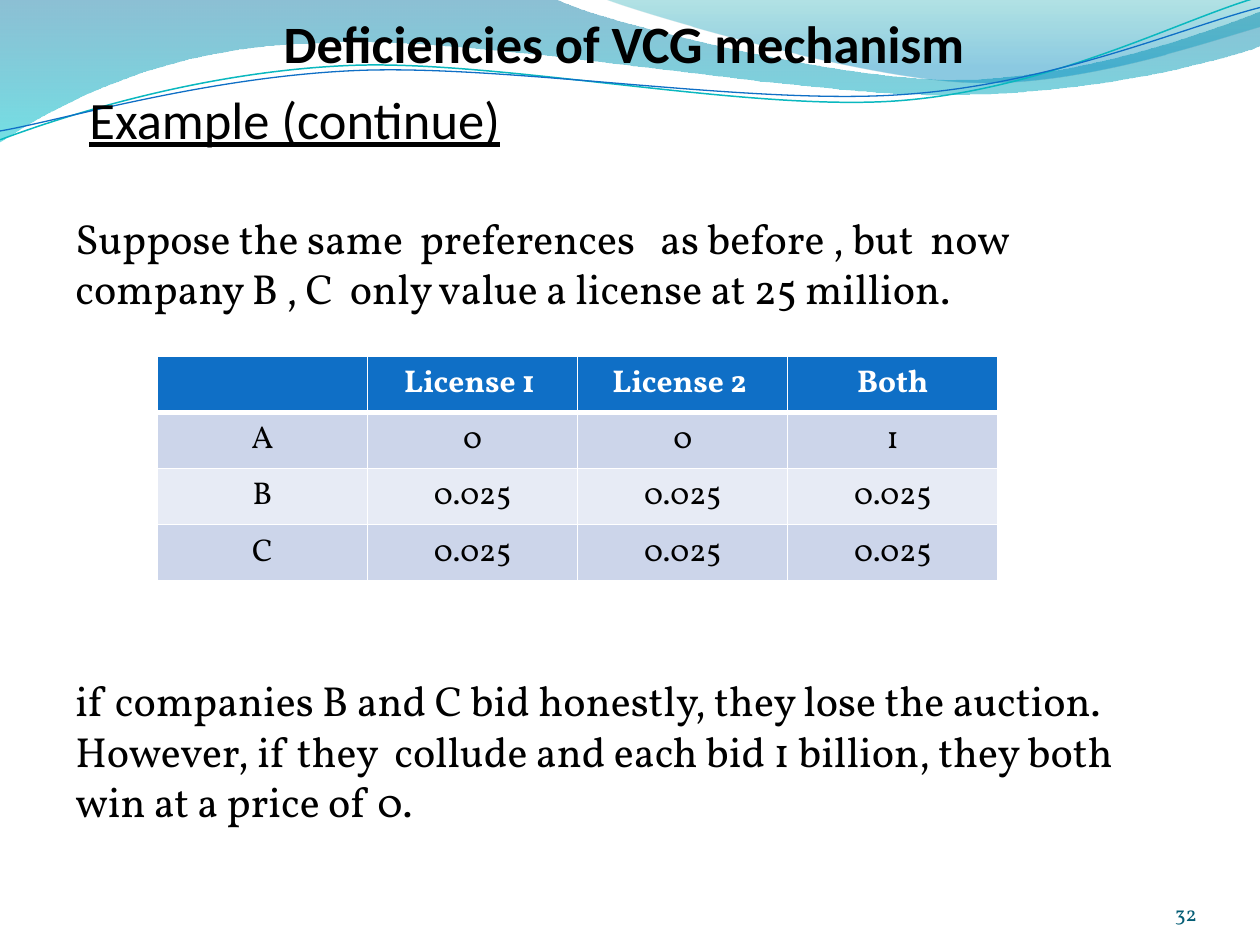
import math
import pptx
import pptx.util
import pptx.dml.color
import pptx.enum.text
import pptx.oxml
import pptx.oxml.ns
from pptx.util import Inches, Pt

RGBColor = pptx.dml.color.RGBColor
Align = pptx.enum.text.PP_ALIGN
Anchor = pptx.enum.text.MSO_ANCHOR

BLACK = RGBColor(0x00, 0x00, 0x00)
WHITE = RGBColor(0xFF, 0xFF, 0xFF)
BLUE = RGBColor(0x0F, 0x6F, 0xC6)
TURQUOISE = RGBColor(0x0A, 0xB8, 0xBF)
NUMBER_TEAL = RGBColor(0x04, 0x5D, 0x75)
BAND_DARK = RGBColor(0xCC, 0xD5, 0xEA)
BAND_LIGHT = RGBColor(0xE7, 0xEB, 0xF5)
WAVE_BLUE = RGBColor(0x00, 0x74, 0xA1)
WAVE_CYAN = RGBColor(0x00, 0xC6, 0xCF)
CREST_TEAL = RGBColor(0x00, 0xA1, 0xA9)
CREST_BLUE = RGBColor(0x00, 0x8B, 0xBF)

LINE_TILT = 2.7

LARGE_WAVE = [
    (0, 0), (4.4, -0.01),
    (4.76, 0.17, 6.64, 0.63, 7.58, 0.63), (8.53, 0.63, 9.58, 0.26, 10, 0.09),
    (10.01, 0.36),
    (9.83, 0.44, 8.7, 0.76, 7.46, 0.75), (6.22, 0.75, 3.82, 0.28, 2.57, 0.34),
    (1.29, 0.36, 0.46, 0.83, -0.01, 1.13),
]
CREST = [
    (4.79, -0.01),
    (5.09, 0.11, 6.82, 0.62, 7.69, 0.65), (8.56, 0.69, 9.61, 0.32, 10, 0.21),
    (10, 0),
]
TURQUOISE_LINE = [
    (0, 1.11),
    (0.48, 0.93, 1.58, 0.57, 2.77, 0.52), (3.95, 0.47, 5.93, 0.89, 7.13, 0.8),
    (8.33, 0.71, 9.38, 0.15, 9.98, -0.02),
]
BLUE_LINE = [
    (0, 1.04),
    (0.47, 0.96, 1.64, 0.61, 2.83, 0.56), (4.03, 0.51, 5.97, 0.84, 7.17, 0.75),
    (8.36, 0.67, 9.41, 0.21, 10, 0.06),
]
VALUES = [
    ["", "License 1 ", "License 2 ", "Both"],
    ["A", "0", "0", "1"],
    ["B", "0.025", "0.025", "0.025"],
    ["C", "0.025", "0.025", "0.025"],
]
BODY = [
    "Suppose the same  preferences   as before , but  now company B , C  only value a license at 25 million.",
    "if companies B and C bid honestly, they lose the auction. However, if they  collude and each bid 1 billion, they both win at a price of 0.",
]


def points_of(segment):
    return list(zip(segment[::2], segment[1::2]))


def level_segments(segments, center):
    angle = math.radians(LINE_TILT)
    cosine, sine = math.cos(angle), math.sin(angle)
    leveled = []
    for segment in segments:
        coordinates = []
        for x, y in points_of(segment):
            across, down = x - center[0], y - center[1]
            coordinates.append(center[0] + across * cosine - down * sine)
            coordinates.append(center[1] + across * sine + down * cosine)
        leveled.append(tuple(coordinates))
    return leveled


def add_outline(slide, segments, close):
    anchors = [
        tuple(Inches(value) for value in segment[-2:]) for segment in segments
    ]
    builder = slide.shapes.build_freeform(*anchors[0])
    builder.add_line_segments(anchors[1:], close=close)
    shape = builder.convert_to_shape()
    shape.shadow.inherit = False
    lines = list(shape.element.spPr.iter(pptx.oxml.ns.qn("a:lnTo")))
    for line, segment in zip(lines, segments[1:]):
        if len(segment) == 6:
            points = "".join(
                f'<a:pt x="{Inches(x) - shape.left}" y="{Inches(y) - shape.top}"/>'
                for x, y in points_of(segment)
            )
            curve = pptx.oxml.parse_xml(
                f'<a:cubicBezTo {pptx.oxml.ns.nsdecls("a")}>{points}</a:cubicBezTo>'
            )
            line.getparent().replace(line, curve)
    return shape


def add_wave(slide, segments, stops):
    shape = add_outline(slide, segments, True)
    shape.line.fill.background()
    shape.fill.gradient()
    shape.fill.gradient_angle = 270
    for stop, (position, color, opacity) in zip(shape.fill.gradient_stops, stops):
        stop.position = position
        stop.color.rgb = color
    colors = shape.element.spPr.iter(pptx.oxml.ns.qn("a:srgbClr"))
    for color_element, (position, color, opacity) in zip(colors, stops):
        alpha = pptx.oxml.parse_xml(
            f'<a:alpha {pptx.oxml.ns.nsdecls("a")} val="{opacity * 1000}"/>'
        )
        color_element.append(alpha)


def add_wave_line(slide, segments, center, color, width):
    shape = add_outline(slide, level_segments(segments, center), False)
    shape.rotation = -LINE_TILT
    shape.fill.background()
    shape.line.color.rgb = color
    shape.line.width = Pt(width)


def format_paragraph(paragraph, font, size, color, align=Align.LEFT, bold=False, underline=False):
    paragraph.alignment = align
    for run in paragraph.runs:
        run.font.name = font
        run.font.size = Pt(size)
        run.font.color.rgb = color
        run.font.bold = bold
        run.font.underline = underline


def place_label(shape, text, box, **style):
    shape.left, shape.top, shape.width, shape.height = (Inches(value) for value in box)
    frame = shape.text_frame
    frame.text = text
    frame.word_wrap = True
    frame.auto_size = pptx.enum.text.MSO_AUTO_SIZE.NONE
    frame.vertical_anchor = Anchor.BOTTOM
    frame.margin_left = frame.margin_right = frame.margin_bottom = 0
    format_paragraph(frame.paragraphs[0], **style)


def add_body(slide):
    frame = slide.shapes.add_textbox(Inches(0.5), Inches(1.17), Inches(9), Inches(5.33)).text_frame
    frame.word_wrap = True
    frame.margin_top = Inches(0.52)
    frame.text = "\n".join(BODY)
    for paragraph in frame.paragraphs:
        format_paragraph(paragraph, "Vollkorn", 24, BLACK)
        paragraph.line_spacing = Pt(28.6)
    frame.paragraphs[1].space_before = Pt(207)


def add_borders(cell, bottom_width):
    properties = cell._tc.get_or_add_tcPr()
    widths = {"lnL": 1, "lnR": 1, "lnT": 1, "lnB": bottom_width}
    for index, (side, width) in enumerate(widths.items()):
        border = pptx.oxml.parse_xml(
            f'<a:{side} {pptx.oxml.ns.nsdecls("a")} w="{Pt(width)}">'
            f'<a:solidFill><a:srgbClr val="{WHITE}"/></a:solidFill></a:{side}>'
        )
        properties.insert(index, border)


def add_value_table(slide):
    table = slide.shapes.add_table(
        4, 4, Inches(1.25), Inches(2.83), Inches(6.67), Inches(1.78)
    ).table
    for row_index, values in enumerate(VALUES):
        header = row_index == 0
        band = BAND_DARK if row_index % 2 else BAND_LIGHT
        for column_index, value in enumerate(values):
            cell = table.cell(row_index, column_index)
            cell.text = value
            cell.fill.solid()
            cell.fill.fore_color.rgb = BLUE if header else band
            color = WHITE if header else BLACK
            format_paragraph(
                cell.text_frame.paragraphs[0], "Vollkorn", 18, color, Align.CENTER, header
            )
            add_borders(cell, 3 if header else 1)


def main():
    presentation = pptx.Presentation()
    presentation.slide_width = Inches(10)
    presentation.slide_height = Inches(7.5)
    slide = presentation.slides.add_slide(presentation.slide_layouts[5])

    add_wave(slide, LARGE_WAVE, [(0, WAVE_BLUE, 45), (1, WAVE_CYAN, 55)])
    add_wave(slide, CREST, [(0, CREST_TEAL, 30), (0.8, CREST_BLUE, 45)])
    add_wave_line(slide, TURQUOISE_LINE, (4.99, 0.58), TURQUOISE, 0.85)
    add_wave_line(slide, BLUE_LINE, (5, 0.59), BLUE, 0.75)
    add_body(slide)
    add_value_table(slide)

    number = slide.shapes.add_textbox(0, 0, 0, 0)
    number.text_frame.margin_top = 0
    place_label(number, "32", (8.67, 6.95, 0.83, 0.4),
                font="Vollkorn", size=12, color=NUMBER_TEAL, align=Align.RIGHT)
    title = slide.shapes.title
    slide.shapes.element.append(title.element)
    place_label(title, "Deficiencies of VCG mechanism", (2.25, 0.01, 7.5, 0.58),
                font="Calibri", size=30, color=BLACK, bold=True)
    subtitle = slide.shapes.add_textbox(0, 0, 0, 0)
    place_label(subtitle, "Example (continue)", (0.71, 0.44, 6.5, 0.75),
                font="Calibri", size=30, color=BLACK, underline=True)
    presentation.save("out.pptx")


if __name__ == "__main__":
    main()
